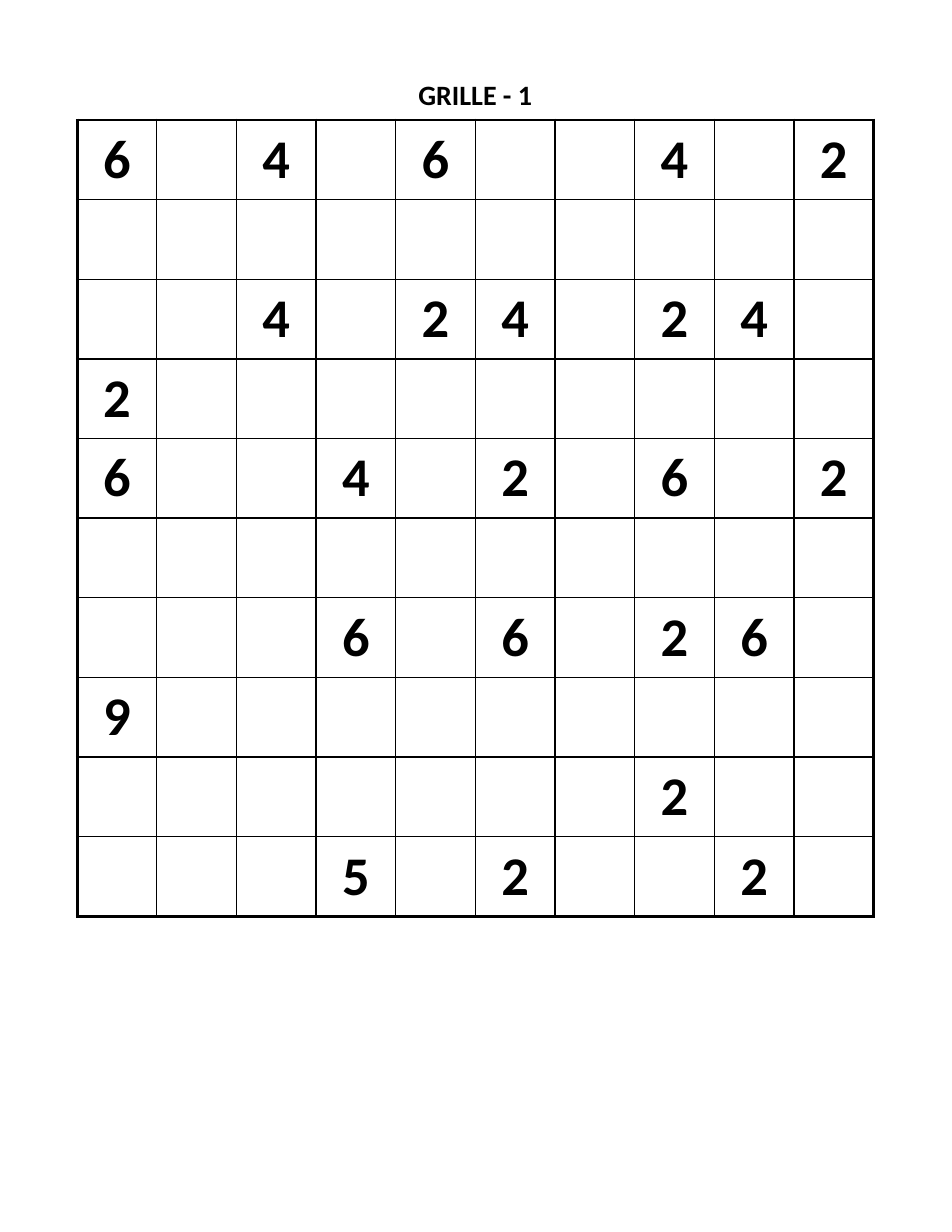
from dataclasses import dataclass

from lxml.etree import SubElement
from pptx import Presentation
from pptx.dml.color import RGBColor
from pptx.enum.text import MSO_ANCHOR, MSO_AUTO_SIZE, PP_ALIGN
from pptx.oxml.ns import qn
from pptx.util import Cm, Pt

TITLE = "GRILLE - 1"
GRID = [
    "6.4.6..4.2",
    "..........",
    "..4.24.24.",
    "2.........",
    "6..4.2.6.2",
    "..........",
    "...6.6.26.",
    "9.........",
    ".......2..",
    "...5.2..2.",
]
EMPTY = "."


@dataclass(frozen=True)
class Theme:
    font: str = "Calibri"
    ink: str = "000000"
    paper: str = "FFFFFF"
    title_size: int = 18
    digit_size: int = 35
    inner_line: int = 1
    outer_line: int = 2


THEME = Theme()
LEFT = Cm(1.75)
TITLE_TOP = Cm(1.75)
TITLE_HEIGHT = Cm(0.76)
GRID_TOP = Cm(2.72)
GRID_SIZE = Cm(18.06)
NO_MARGINS = dict.fromkeys(("margin_left", "margin_top", "margin_right", "margin_bottom"), 0)
TITLE_FORMAT = {**NO_MARGINS, "word_wrap": True, "auto_size": MSO_AUTO_SIZE.SHAPE_TO_FIT_TEXT}
CELL_FORMAT = {**NO_MARGINS, "vertical_anchor": MSO_ANCHOR.MIDDLE}


def apply_format(target, values):
    for name, value in values.items():
        setattr(target, name, value)


def write_text(text_frame, text, size):
    paragraph = text_frame.paragraphs[0]
    paragraph.alignment = PP_ALIGN.CENTER
    run = paragraph.add_run()
    run.text = text
    apply_format(run.font, {"name": THEME.font, "size": Pt(size), "bold": True})
    run.font.color.rgb = RGBColor.from_string(THEME.ink)


def add_border(cell_properties, side, width):
    line = SubElement(cell_properties, qn(f"a:ln{side}"), w=str(Pt(width)))
    fill = SubElement(line, qn("a:solidFill"))
    SubElement(fill, qn("a:srgbClr"), val=THEME.ink)


def format_cell(cell, row, column, last):
    apply_format(cell, CELL_FORMAT)
    cell_properties = cell._tc.get_or_add_tcPr()
    on_edge = {"L": column == 0, "R": column == last, "T": row == 0, "B": row == last}
    for side, outer in on_edge.items():
        add_border(cell_properties, side, THEME.outer_line if outer else THEME.inner_line)
    cell.fill.solid()
    cell.fill.fore_color.rgb = RGBColor.from_string(THEME.paper)


def add_title(slide):
    shape = slide.shapes.add_textbox(LEFT, TITLE_TOP, GRID_SIZE, TITLE_HEIGHT)
    apply_format(shape.text_frame, TITLE_FORMAT)
    write_text(shape.text_frame, TITLE, THEME.title_size)


def add_grid(slide):
    count = len(GRID)
    shape = slide.shapes.add_table(count, count, LEFT, GRID_TOP, GRID_SIZE, GRID_SIZE)
    table = shape.table
    apply_format(table, {"first_row": False, "horz_banding": False})
    for row, digits in enumerate(GRID):
        for column, digit in enumerate(digits):
            cell = table.cell(row, column)
            format_cell(cell, row, column, count - 1)
            if digit != EMPTY:
                write_text(cell.text_frame, digit, THEME.digit_size)


def main():
    presentation = Presentation()
    apply_format(presentation, {"slide_width": Cm(21.59), "slide_height": Cm(27.94)})
    slide = presentation.slides.add_slide(presentation.slide_layouts[6])
    add_title(slide)
    add_grid(slide)
    presentation.save("out.pptx")


if __name__ == "__main__":
    main()
